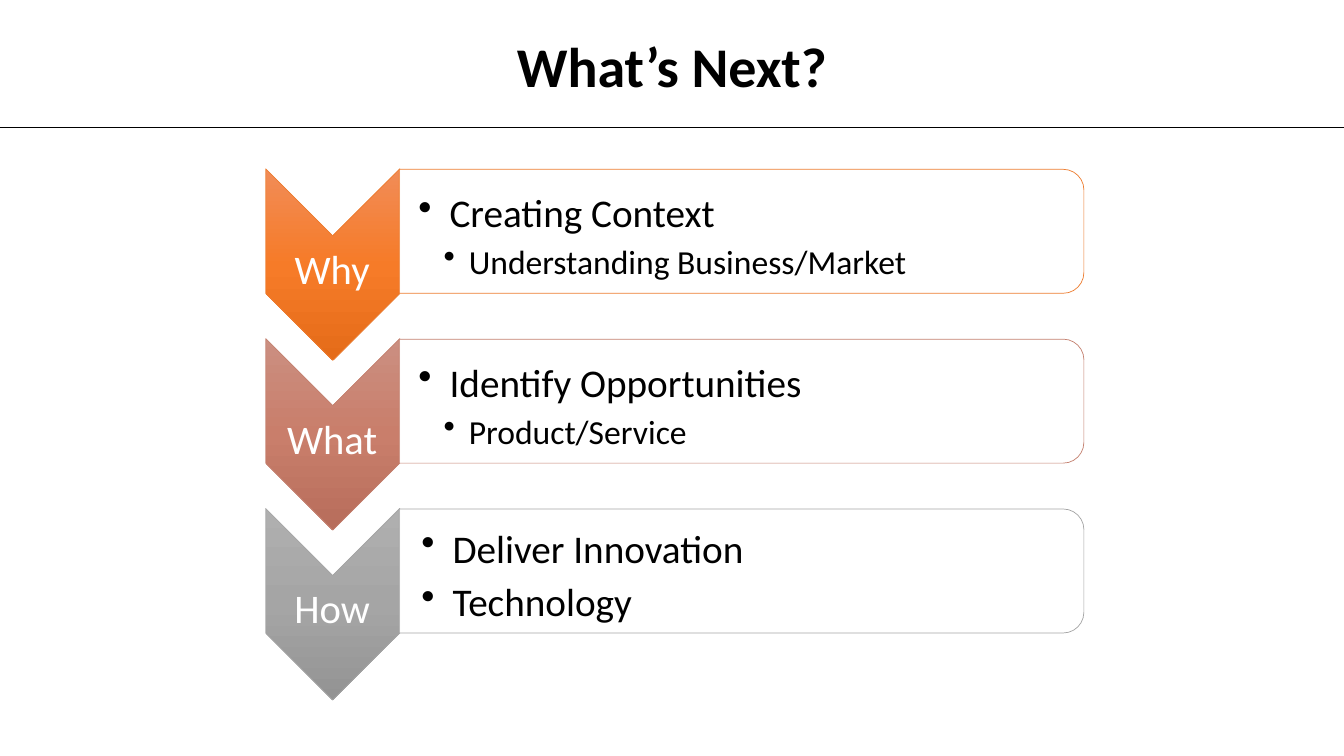
"""Build the "What's Next?" slide with three chevron steps."""
from lxml import etree
from pptx import Presentation
from pptx.dml.color import RGBColor
from pptx.enum.shapes import MSO_CONNECTOR, MSO_SHAPE
from pptx.enum.text import MSO_ANCHOR, MSO_AUTO_SIZE, PP_ALIGN
from pptx.oxml import parse_xml
from pptx.oxml.ns import nsdecls, qn
from pptx.util import Inches, Pt


def color(value):
    return RGBColor.from_string(value)


def add_text(box, lines, text_color, line_spacing=None):
    """Fill a text box with (text, size) lines and return its paragraphs."""
    frame = box.text_frame
    frame.text = "\n".join(text for text, size in lines)
    for paragraph, (text, size) in zip(frame.paragraphs, lines):
        paragraph.font.name = "Calibri"
        paragraph.font.size = Pt(size)
        paragraph.font.color.rgb = color(text_color)
        paragraph.line_spacing = line_spacing
    return frame.paragraphs


STEPS = [
    ("Why", [("Creating Context", 28), ("Understanding Business/Market", 24)],
     "ED7D31", ["F18C57", "F67B28", "E56C19"], 0.19),
    ("What", [("Identify Opportunities", 28), ("Product/Service", 24)],
     "C48170", ["CB8F81", "C97E6B", "B76D5B"], 0.19),
    ("How", [("Deliver Innovation", 28), ("Technology", 28)],
     "A5A5A5", ["AFAFAF", "A5A5A5", "939393"], 0.22),
]
STEP_PITCH = 3.37 / 2
BULLET_INDENTS = {28: (0.31, 0), 24: (0.5, 1)}

presentation = Presentation()
presentation.slide_width = Inches(13.33)
presentation.slide_height = Inches(7.5)
slide = presentation.slides.add_slide(presentation.slide_layouts[6])
shapes = slide.shapes

for index, (label, bullets, line_color, gradient, left_inset) in enumerate(STEPS):
    offset = index * STEP_PITCH

    chevron = shapes.add_shape(MSO_SHAPE.CHEVRON, Inches(2.35), Inches(1.96 + offset),
                               Inches(1.9), Inches(1.33))
    stops = "".join(
        f'<a:gs pos="{position * 50000}"><a:srgbClr val="{stop}"/></a:gs>'
        for position, stop in enumerate(gradient))
    chevron._element.spPr.find(qn("a:prstGeom")).addnext(parse_xml(
        f'<a:gradFill {nsdecls("a")} rotWithShape="0"><a:gsLst>{stops}</a:gsLst>'
        '<a:lin ang="5400000" scaled="0"/></a:gradFill>'))

    label_box = shapes.add_textbox(Inches(2.63), Inches(2.34 + offset),
                                   Inches(1.33), Inches(0.57))
    add_text(label_box, [(label, 29)], "FFFFFF", 1.14)[0].alignment = PP_ALIGN.CENTER

    panel = shapes.add_shape(MSO_SHAPE.ROUND_2_SAME_RECTANGLE, Inches(6.74),
                             Inches(-1.1 + offset), Inches(1.23), Inches(6.79))
    panel.fill.solid()
    panel.fill.fore_color.rgb = color("FFFFFF")
    panel_color = panel._element.spPr.find(qn("a:solidFill"))[0]
    etree.SubElement(panel_color, qn("a:alpha"), val="90000")

    for shape in (chevron, panel):
        shape.rotation = 90
        shape.shadow.inherit = False
        shape.line.color.rgb = color(line_color)
        shape.line.width = Pt(0.5)

    bullet_box = shapes.add_textbox(Inches(3.96), Inches(1.74 + offset),
                                    Inches(6.73), Inches(1.11))
    for paragraph, (text, size) in zip(add_text(bullet_box, bullets, "000000", 1.14), bullets):
        margin, paragraph.level = BULLET_INDENTS[size]
        hanging = 0.25 if paragraph.level else margin
        properties = paragraph._p.get_or_add_pPr()
        properties.set("marL", str(Inches(margin)))
        properties.set("indent", str(-Inches(hanging)))
        bullet = parse_xml(f'<a:buChar {nsdecls("a")} char="•"/>')
        properties.find(qn("a:defRPr")).addprevious(bullet)

    for box, inset in ((label_box, 0.02), (bullet_box, left_inset)):
        frame = box.text_frame
        frame.word_wrap = True
        frame.vertical_anchor = MSO_ANCHOR.MIDDLE
        frame.margin_left = Inches(inset)
        frame.margin_top = frame.margin_right = frame.margin_bottom = Inches(0.02)

divider = shapes.add_connector(MSO_CONNECTOR.STRAIGHT, 0, Inches(1.26),
                               Inches(13.33), Inches(1.26))
divider.line.color.rgb = color("000000")
divider.line.width = Pt(0.5)
etree.SubElement(divider._element.spPr, qn("a:effectLst"))

title_box = shapes.add_textbox(Inches(5.01), Inches(0.26), Inches(3.31), Inches(0.77))
title_box.text_frame.word_wrap = False
title_box.text_frame.auto_size = MSO_AUTO_SIZE.SHAPE_TO_FIT_TEXT
title = add_text(title_box, [("What’s Next?", 40)], "000000")[0]
title.alignment = PP_ALIGN.CENTER
title.font.bold = True

presentation.save("out.pptx")
